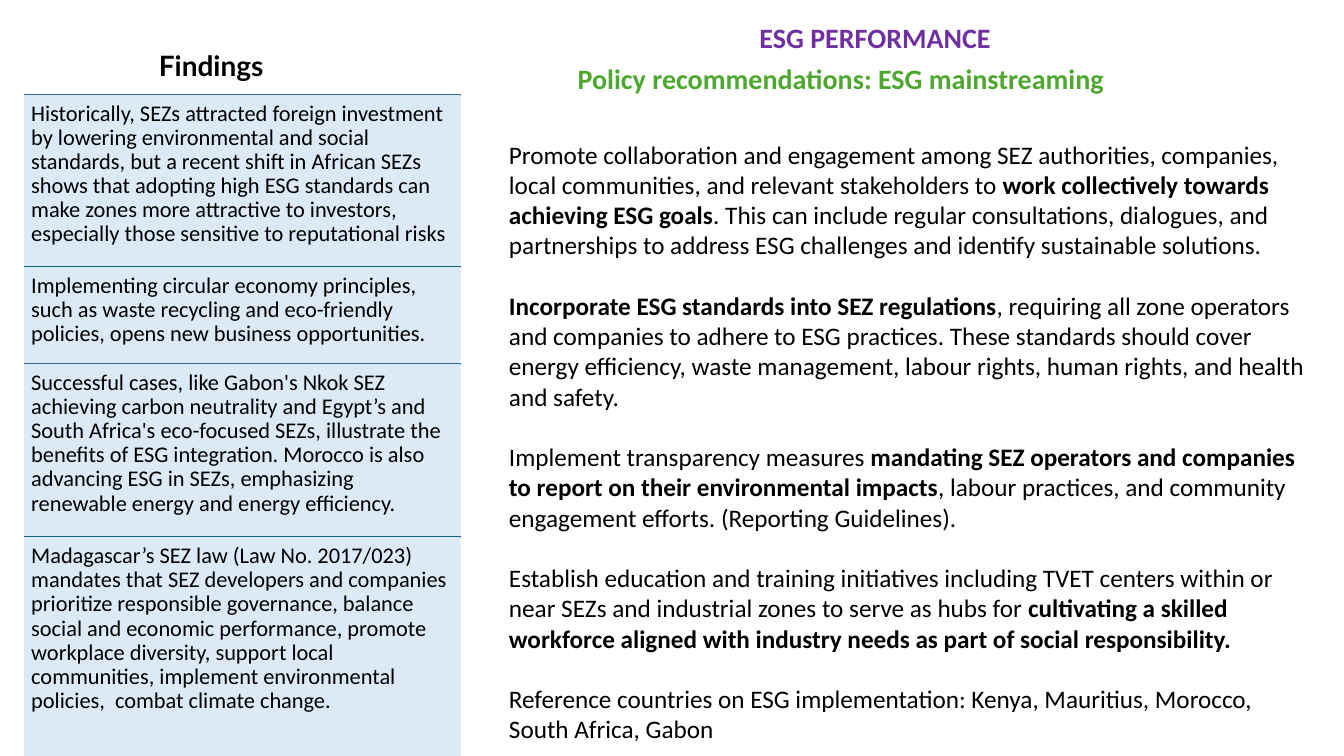
from lxml import etree
from pptx import Presentation
from pptx.dml.color import RGBColor
from pptx.enum.shapes import MSO_CONNECTOR, MSO_SHAPE
from pptx.enum.text import MSO_ANCHOR, PP_ALIGN
from pptx.oxml.ns import qn
from pptx.util import Inches, Pt

PURPLE = RGBColor(0x70, 0x30, 0xA0)
GREEN = RGBColor(0x4E, 0xA7, 0x2E)
BLACK = RGBColor(0x00, 0x00, 0x00)
TEAL = RGBColor(0x15, 0x60, 0x82)
PALE_BLUE = RGBColor(0xDC, 0xEA, 0xF7)

STRAIGHT = MSO_CONNECTOR.STRAIGHT
RECTANGLE = MSO_SHAPE.RECTANGLE
TOP, MIDDLE = MSO_ANCHOR.TOP, MSO_ANCHOR.MIDDLE
LEFT, CENTER = PP_ALIGN.LEFT, PP_ALIGN.CENTER

FINDINGS_LEFT, FINDINGS_WIDTH = 0.24, 4.33

# Each finding with the top of its panel; a panel ends where the next begins
FINDINGS = [
    (0.94, "Historically, SEZs attracted foreign investment by lowering environmental "
           "and social standards, but a recent shift in African SEZs shows that adopting "
           "high ESG standards can make zones more attractive to investors, especially "
           "those sensitive to reputational risks"),
    (2.65, "Implementing circular economy principles, such as waste recycling and "
           "eco-friendly policies, opens new business opportunities."),
    (3.61, "Successful cases, like Gabon's Nkok SEZ achieving carbon neutrality and "
           "Egypt’s and South Africa's eco-focused SEZs, illustrate the benefits of ESG "
           "integration. Morocco is also advancing ESG in SEZs, emphasizing renewable "
           "energy and energy efficiency."),
    (5.33, "Madagascar’s SEZ law (Law No. 2017/023) mandates that SEZ developers and "
           "companies prioritize responsible governance, balance social and economic "
           "performance, promote workplace diversity, support local communities, "
           "implement environmental policies,  combat climate change."),
]
FINDINGS_BOTTOM = 7.5

# Each recommendation is a list of (text, bold) runs
RECOMMENDATIONS = [
    [("Promote collaboration and engagement among SEZ authorities, companies, local "
      "communities, and relevant stakeholders to ", False),
     ("work collectively towards achieving ESG goals", True),
     (". This can include regular consultations, dialogues, and partnerships to address "
      "ESG challenges and identify sustainable solutions.", False)],
    [("Incorporate ESG standards into SEZ regulations", True),
     (", requiring all zone operators and companies to adhere to ESG practices. These "
      "standards should cover energy efficiency, waste management, labour rights, human "
      "rights, and health and safety.", False)],
    [("Implement transparency measures ", False),
     ("mandating SEZ operators and companies to report on their environmental impacts", True),
     (", labour practices, and community engagement efforts. (Reporting Guidelines).", False)],
    [("Establish education and training initiatives including TVET centers within or near "
      "SEZs and industrial zones to serve as hubs for ", False),
     ("cultivating a skilled workforce aligned with industry needs as part of social "
      "responsibility.", True)],
    [("Reference countries on ESG implementation: Kenya, Mauritius, Morocco, South Africa, "
      "Gabon", False)],
]


class SlideBuilder:
    """Holds the text style and the slide being filled."""

    font_name = "Calibri"

    def __init__(self, slide):
        self.slide = slide

    def style(self, paragraph, size, color=BLACK, align=LEFT, font_name=None):
        paragraph.alignment = align
        paragraph.font.name = font_name or self.font_name
        paragraph.font.size = Pt(size)
        paragraph.font.color.rgb = color

    def text_frame(self, left, top, width, height, anchor=TOP):
        box = self.slide.shapes.add_textbox(
            Inches(left), Inches(top), Inches(width), Inches(height))
        frame = box.text_frame
        frame.word_wrap = True
        frame.vertical_anchor = anchor
        return frame

    def heading(self, text, left, top, width, height, color, font_name=None):
        paragraph = self.text_frame(left, top, width, height, MIDDLE).paragraphs[0]
        paragraph.text = text
        self.style(paragraph, 20, color, CENTER, font_name)
        paragraph.font.bold = True

    def body(self, paragraphs, left, top, width, height, size, gap):
        frame = self.text_frame(left, top, width, height)
        for index, runs in enumerate(paragraphs):
            paragraph = frame.add_paragraph() if index else frame.paragraphs[0]
            self.style(paragraph, size)
            paragraph.space_before = Pt(gap if index else 0)
            for text, bold in runs:
                run = paragraph.add_run()
                run.text = text
                run.font.bold = bold

    def rule(self, left, top, width):
        line = self.slide.shapes.add_connector(
            STRAIGHT, Inches(left), Inches(top), Inches(left + width), Inches(top))
        line.line.color.rgb = TEAL
        line.line.width = Pt(1.5)
        etree.SubElement(line._element.spPr, qn("a:effectLst"))

    def panel(self, text, left, top, width, height):
        panel = self.slide.shapes.add_shape(
            RECTANGLE, Inches(left), Inches(top), Inches(width), Inches(height))
        panel.shadow.inherit = False
        panel.fill.solid()
        panel.fill.fore_color.rgb = PALE_BLUE
        panel.line.fill.background()
        frame = panel.text_frame
        frame.word_wrap = True
        frame.vertical_anchor = TOP
        frame.margin_left = frame.margin_right = Inches(0.07)
        frame.margin_top = frame.margin_bottom = Inches(0.07)
        paragraph = frame.paragraphs[0]
        paragraph.text = text
        paragraph.line_spacing = 0.9
        self.style(paragraph, 16)


def main():
    presentation = Presentation()
    presentation.slide_width = Inches(13.33)
    presentation.slide_height = Inches(7.5)
    builder = SlideBuilder(presentation.slides.add_slide(presentation.slide_layouts[6]))

    # Headings
    builder.heading("ESG PERFORMANCE", 6.18, 0.19, 5, 0.36, PURPLE)
    builder.heading("Findings", 0.2, 0.43, 3.79, 0.44, BLACK, "Lato")
    builder.heading("Policy recommendations: ESG mainstreaming",
                    4.67, 0.56, 7.34, 0.44, GREEN)

    # Recommendations, one line apart
    builder.body(RECOMMENDATIONS, 4.95, 1.33, 8.14, 6.46, size=18, gap=21.6)

    # Stacked findings, each under a rule
    bottoms = [top for top, _ in FINDINGS[1:]] + [FINDINGS_BOTTOM]
    for (top, finding), bottom in zip(FINDINGS, bottoms):
        builder.rule(FINDINGS_LEFT, top, FINDINGS_WIDTH)
        builder.panel(finding, FINDINGS_LEFT, top, FINDINGS_WIDTH, bottom - top)

    presentation.save("out.pptx")


if __name__ == "__main__":
    main()
